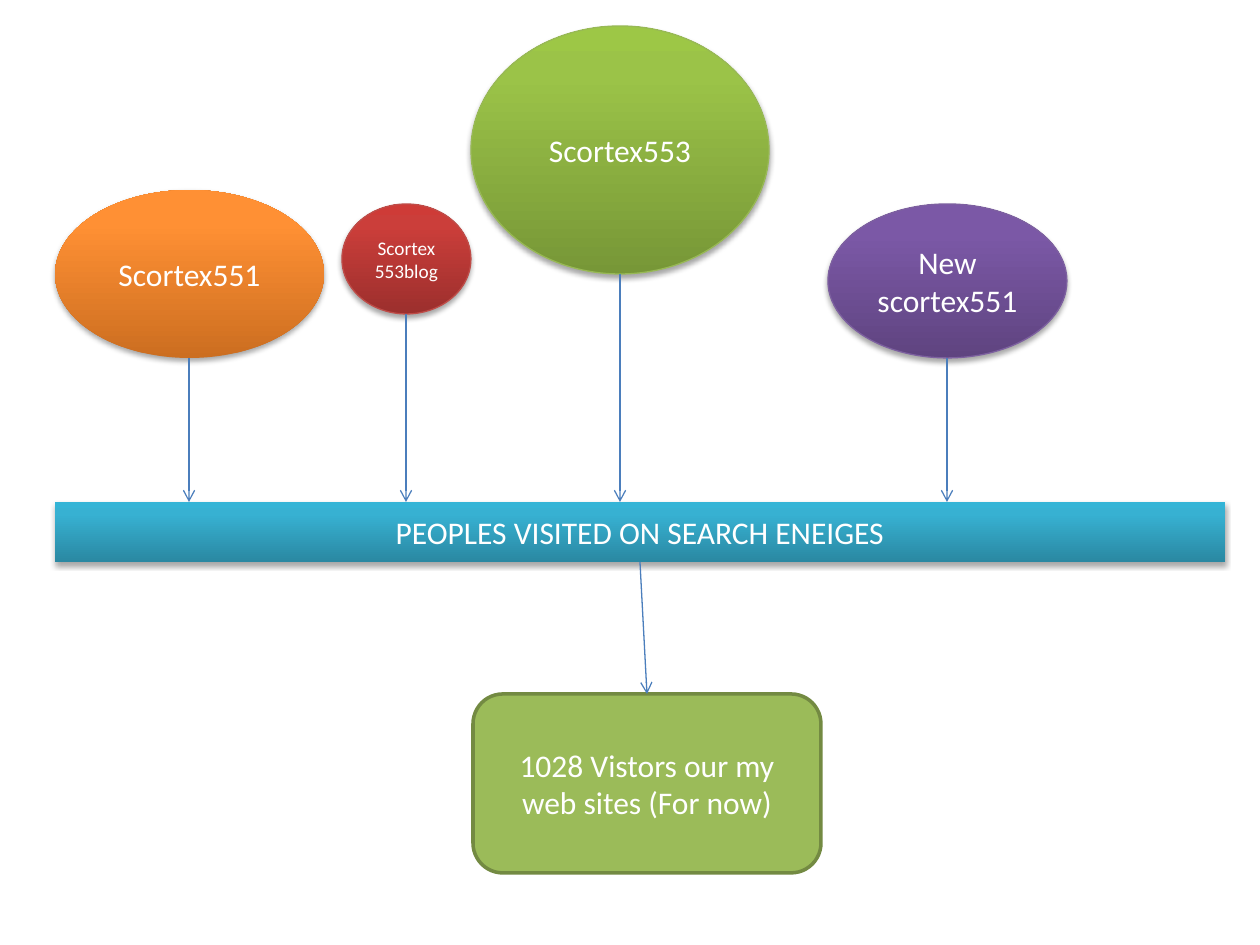
"""Build a slide of sites feeding search visits into a visitor total."""
from dataclasses import dataclass
from copy import deepcopy

from lxml import etree
from pptx import Presentation
from pptx.dml.color import RGBColor
from pptx.enum import shapes, text
from pptx.oxml.ns import qn
from pptx.util import Pt

EMU_PER_PX = 914400 / 126
FONT = "Calibri"
WHITE = "FFFFFF"
ARROW = "4B7EBC"


@dataclass(frozen=True)
class Node:
    """A labelled shape, measured in px, with one or three fill colours."""

    label: str
    x: int
    y: int
    w: int
    h: int
    fill: tuple[str, ...]
    line: str | None = None
    line_pt: float = 0.75
    size: int = 18
    kind: shapes.MSO_SHAPE = shapes.MSO_SHAPE.OVAL

    @property
    def centre(self) -> int:
        """Return the horizontal middle."""
        return self.x + self.w // 2

    @property
    def bottom(self) -> int:
        """Return the lower edge."""
        return self.y + self.h


BAR = Node("PEOPLES VISITED ON SEARCH ENEIGES", 55, 502, 1170, 60,
           ("2A88A2", "37B1D2", "34B4D6"), kind=shapes.MSO_SHAPE.RECTANGLE)
SITES = (
    Node("Scortex553", 471, 26, 298, 248, ("779737", "9BC348", "9DC746"), "98B955"),
    Node("Scortex551", 55, 190, 269, 168, ("CC6E20", "FF9034", "FF9136")),
    Node("New scortex551", 828, 204, 239, 154, ("5F4480", "7B58A6", "7C57A8"), "7D60A0"),
    Node("Scortex553blog", 342, 204, 129, 110, ("9C2F2D", "CB3E3A", "CE3B37"), "BF4C48",
         size=11),
)
TOTAL = Node("1028 Vistors our my web sites (For now)", 473, 694, 348, 179,
             ("9BBB59",), "738A42", 2, kind=shapes.MSO_SHAPE.ROUNDED_RECTANGLE)


def px(n: int) -> int:
    """Turn px into EMU."""
    return round(n * EMU_PER_PX)


def rgb(value: str) -> RGBColor:
    """Turn a hex string into a colour."""
    return RGBColor.from_string(value)


def write(tf, words: str, *, size: int, color: str = WHITE, font: str = FONT) -> None:
    """Put centred, formatted text into a frame."""
    tf.word_wrap = True
    tf.vertical_anchor = text.MSO_ANCHOR.MIDDLE
    p = tf.paragraphs[0]
    p.alignment = text.PP_ALIGN.CENTER
    r = p.add_run()
    r.text = words
    r.font.size, r.font.name = Pt(size), font
    r.font.color.rgb = rgb(color)


def shade(sp, colors: tuple[str, ...]) -> None:
    """Fill a shape with a bottom-to-top gradient."""
    sp.fill.gradient()
    sp.fill.gradient_angle = 90
    stops = sp._element.spPr.find(qn("a:gradFill")).find(qn("a:gsLst"))
    stops.append(deepcopy(stops[-1]))
    for stop, color, place in zip(sp.fill.gradient_stops, colors, (0, 0.8, 1)):
        stop.color.rgb, stop.position = rgb(color), place


def add_shadow(sp) -> None:
    """Give a shape a soft shadow falling downwards."""
    effects = sp._element.spPr.find(qn("a:effectLst"))
    shadow = etree.SubElement(effects, qn("a:outerShdw"), blurRad=str(Pt(3.1)),
                              dist=str(Pt(1.8)), dir="5400000", rotWithShape="0")
    color = etree.SubElement(shadow, qn("a:srgbClr"), val="000000")
    etree.SubElement(color, qn("a:alpha"), val="35000")


def add_node(s, node: Node):
    """Draw a node and return its shape."""
    sp = s.shapes.add_shape(node.kind, px(node.x), px(node.y), px(node.w), px(node.h))
    sp.shadow.inherit = False
    if len(node.fill) > 1:
        shade(sp, node.fill)
        add_shadow(sp)
    else:
        sp.fill.solid()
        sp.fill.fore_color.rgb = rgb(node.fill[0])
    if node.line:
        sp.line.color.rgb = rgb(node.line)
        sp.line.width = Pt(node.line_pt)
    else:
        sp.line.fill.background()
    write(sp.text_frame, node.label, size=node.size)
    return sp


def add_arrow(s, x1: int, y1: int, x2: int, y2: int):
    """Draw a straight line with an open arrowhead at its end."""
    line = s.shapes.add_connector(shapes.MSO_CONNECTOR.STRAIGHT,
                                  px(x1), px(y1), px(x2), px(y2))
    line.line.color.rgb = rgb(ARROW)
    line.line.width = Pt(0.75)
    etree.SubElement(line.line._get_or_add_ln(), qn("a:tailEnd"), type="arrow")
    etree.SubElement(line._element.spPr, qn("a:effectLst"))
    return line


def main() -> None:
    """Build and save the slide."""
    prs = Presentation()
    prs.slide_width, prs.slide_height = px(1260), px(945)
    s = prs.slides.add_slide(prs.slide_layouts[6])
    bar = add_node(s, BAR)
    for site in SITES:
        add_node(s, site)
        add_arrow(s, site.centre, site.bottom, site.centre, BAR.y)
    total = add_node(s, TOTAL)
    link = add_arrow(s, BAR.centre, BAR.bottom, TOTAL.centre, TOTAL.y)
    link.begin_connect(bar, 2)
    link.end_connect(total, 0)
    prs.save("out.pptx")


if __name__ == "__main__":
    main()
